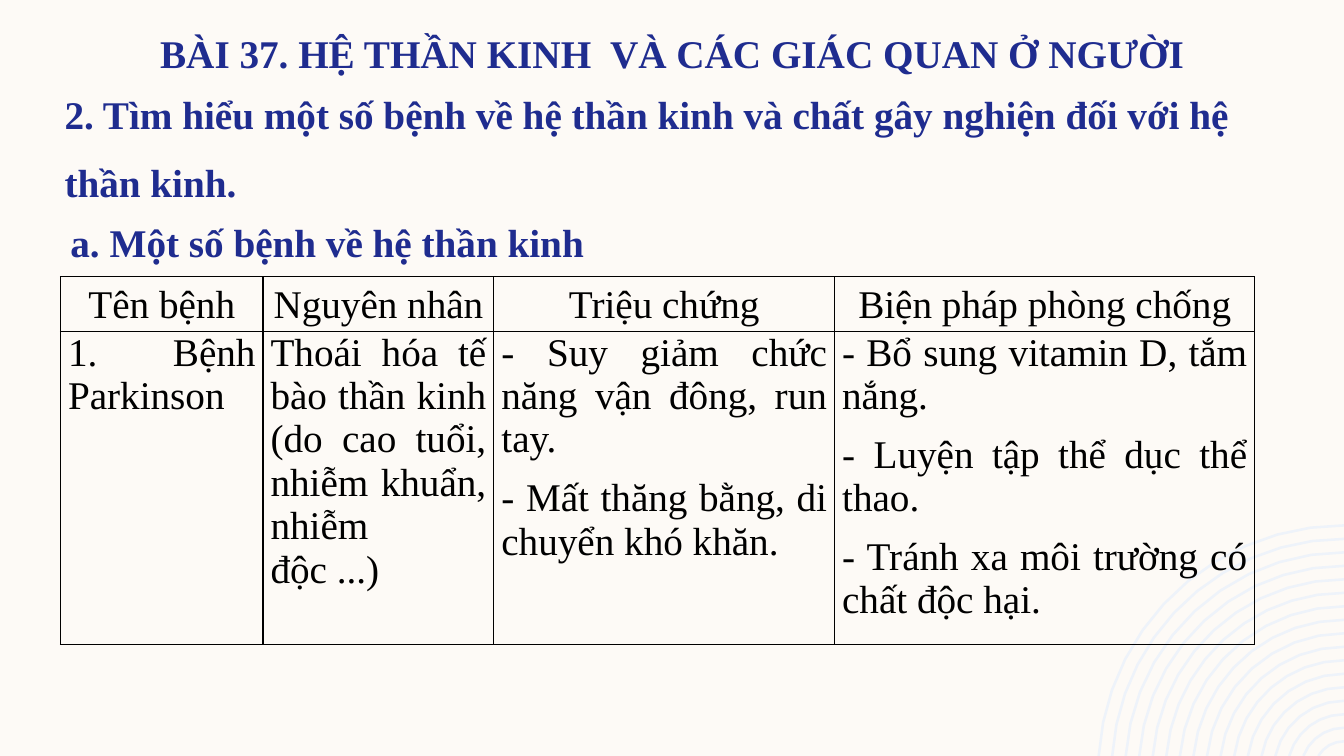
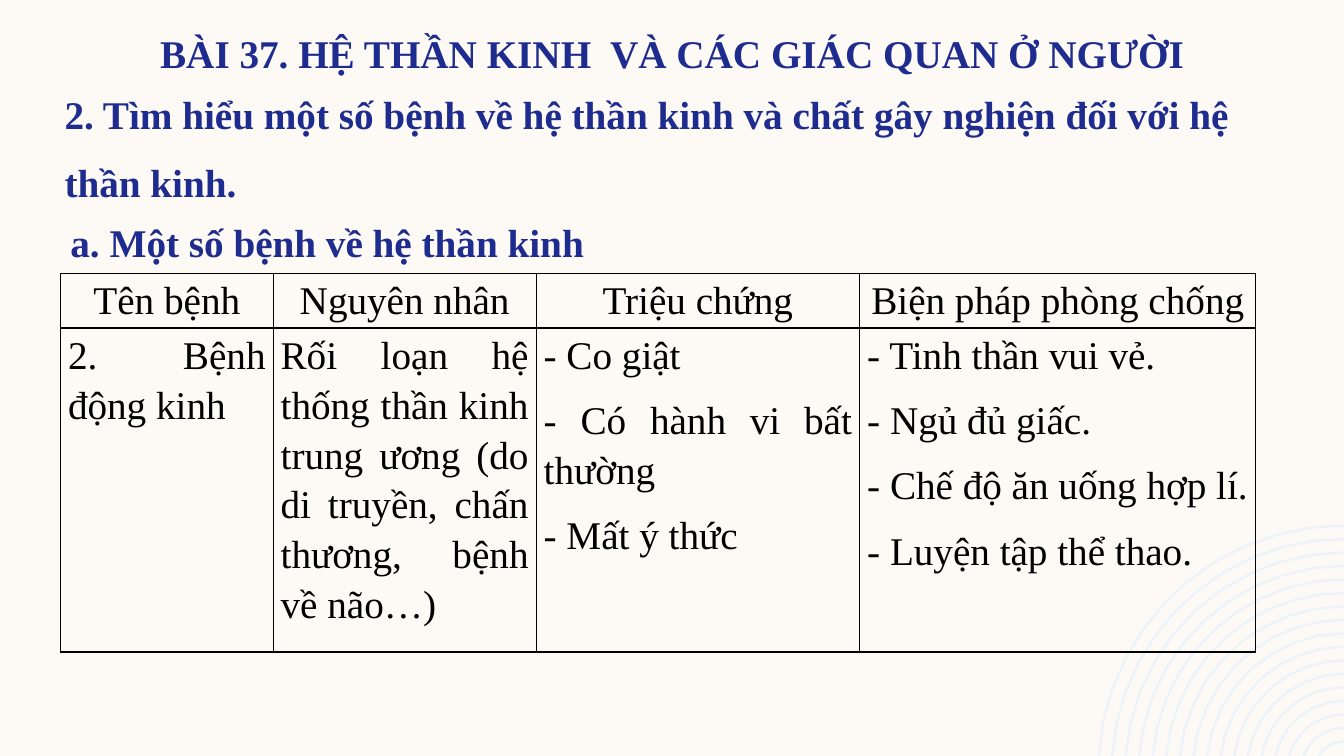
"""Build two lesson slides on diseases of the nervous system."""
from math import asin, ceil, cos, pi, sin, sqrt

from lxml.etree import SubElement
from pptx import Presentation
from pptx.dml.color import RGBColor
from pptx.enum.text import MSO_ANCHOR, MSO_AUTO_SIZE, PP_ALIGN
from pptx.oxml.ns import qn
from pptx.util import Pt

COLORS = {"paper": "FDFAF6", "rings": "EEF3FA", "heading": "1F2C8F", "text": "000000"}
FONT, FONT_SIZE = "Times New Roman", 28
WIDTH, HEIGHT = 960, 540

LESSON = "BÀI 37. HỆ THẦN KINH  VÀ CÁC GIÁC QUAN Ở NGƯỜI"
SECTION = "2. Tìm hiểu một số bệnh về hệ thần kinh và chất gây nghiện đối với hệ thần kinh."
TOPIC = "a. Một số bệnh về hệ thần kinh"
HEADERS = ["Tên bệnh", "Nguyên nhân", "Triệu chứng", "Biện pháp phòng chống"]
HEADER_HEIGHT = 39

DISEASES = [
    {
        "top": 197.6, "height": 223.6, "columns": [144.7, 164.9, 243.4, 300.2], "spacing": 1.0,
        "facts": [
            ["1. Bệnh Parkinson"],
            ["Thoái hóa tế bào thần kinh (do cao tuổi, nhiễm khuẩn, nhiễm độc ...)"],
            ["- Suy giảm chức năng vận đông, run tay.", "- Mất thăng bằng, di chuyển khó khăn."],
            ["- Bổ sung vitamin D, tắm nắng.", "- Luyện tập thể dục thể thao.",
             "- Tránh xa môi trường có chất độc hại."],
        ],
    },
    {
        "top": 195.3, "height": 231.5, "columns": [151.9, 187.9, 231.1, 283], "spacing": 1.15,
        "facts": [
            ["2. Bệnh động kinh"],
            ["Rối loạn hệ thống thần kinh trung ương (do di truyền, chấn thương, bệnh về não…)"],
            ["- Co giật", "- Có hành vi bất thường", "- Mất ý thức"],
            ["- Tinh thần vui vẻ.", "- Ngủ đủ giấc.", "- Chế độ ăn uống hợp lí.",
             "- Luyện tập thể thao."],
        ],
    },
]

RING_COUNT, RING_STEP, RING_WIDTH = 17, 9.64, 1.8
RING_RADIUS, RING_CENTER_Y = 175.5, 550.8


def rgb(name):
    return RGBColor.from_string(COLORS[name])


def write(frame, lines, color, align, spacing, before=0, after=0, bold=False):
    frame.text = "\n".join(lines)
    for index, paragraph in enumerate(frame.paragraphs):
        paragraph.alignment = align
        paragraph.line_spacing = spacing
        paragraph.space_before = Pt(before if index else 0)
        paragraph.space_after = Pt(after)
        for run in paragraph.runs:
            run.font.name = FONT
            run.font.size = Pt(FONT_SIZE)
            run.font.bold = bold
            run.font.color.rgb = rgb(color)


def place_heading(heading, text, box, align, spacing, insets, after=0):
    heading.left, heading.top, heading.width, heading.height = map(Pt, box)
    frame = heading.text_frame
    frame.word_wrap = True
    frame.auto_size = MSO_AUTO_SIZE.NONE
    frame.vertical_anchor = MSO_ANCHOR.TOP
    frame.margin_left = frame.margin_right = Pt(7.2)
    frame.margin_top, frame.margin_bottom = map(Pt, insets)
    write(frame, [text], "heading", align, spacing, after=after, bold=True)


def arc(radius):
    start = asin((RING_CENTER_Y - HEIGHT) / radius)
    steps = ceil(0.8 * sqrt(radius))
    angles = [start + (pi / 2 - start) * step / steps for step in range(steps + 1)]
    return [(Pt(WIDTH - radius * cos(a)), Pt(RING_CENTER_Y - radius * sin(a))) for a in angles]


def add_rings(slide, layout):
    arcs = [arc(RING_RADIUS - RING_STEP * index) for index in range(RING_COUNT)]
    builder = slide.shapes.build_freeform(*arcs[0][0])
    builder.add_line_segments(arcs[0][1:], close=False)
    for points in arcs[1:]:
        builder.move_to(*points[0])
        builder.add_line_segments(points[1:], close=False)
    rings = builder.convert_to_shape()
    rings.shadow.inherit = False
    rings.fill.background()
    rings.line.color.rgb = rgb("rings")
    rings.line.width = Pt(RING_WIDTH)
    layout.shapes.element.insert(2, rings.element)


def style_cell(cell):
    cell.margin_left = cell.margin_right = Pt(5.4)
    cell.margin_top = cell.margin_bottom = 0
    properties = cell._tc.get_or_add_tcPr()
    for side in ("lnL", "lnR", "lnT", "lnB"):
        border = SubElement(properties, qn(f"a:{side}"), w=str(Pt(1)))
        fill = SubElement(border, qn("a:solidFill"))
        SubElement(fill, qn("a:srgbClr"), val=COLORS["text"])
    cell.fill.background()


def add_disease_table(slide, disease):
    columns = disease["columns"]
    heights = [HEADER_HEIGHT, disease["height"]]
    table = slide.shapes.add_table(
        2, len(columns), Pt(43.2), Pt(disease["top"]), Pt(sum(columns)), Pt(sum(heights))).table
    table.first_row = table.horz_banding = False
    for row, height in zip(table.rows, heights):
        row.height = Pt(height)
    for index, width in enumerate(columns):
        table.columns[index].width = Pt(width)
        header, fact = table.cell(0, index), table.cell(1, index)
        style_cell(header)
        style_cell(fact)
        write(header.text_frame, [HEADERS[index]], "text", PP_ALIGN.CENTER, 1.15, after=3)
        write(fact.text_frame, disease["facts"][index], "text", PP_ALIGN.JUSTIFY,
              disease["spacing"], before=8, after=3)


def add_disease_slide(deck, layout, disease):
    slide = deck.slides.add_slide(layout)
    place_heading(slide.shapes.title, LESSON, (0, 5.8, WIDTH, 46.8),
                  PP_ALIGN.CENTER, Pt(48.8), (0, 3.6))
    section = slide.shapes.add_textbox(0, 0, 0, 0)
    place_heading(section, SECTION, (39, 49, 888, 46.8), PP_ALIGN.LEFT, Pt(48.8), (0, 3.6))
    add_disease_table(slide, disease)
    topic = slide.shapes.add_textbox(0, 0, 0, 0)
    place_heading(topic, TOPIC, (43.2, 147.6, 480, 44), PP_ALIGN.JUSTIFY, 1.15, (3.6, 3.6), after=3)
    return slide


def main():
    deck = Presentation()
    deck.slide_width, deck.slide_height = Pt(WIDTH), Pt(HEIGHT)
    backdrop = deck.slide_master.background.fill
    backdrop.solid()
    backdrop.fore_color.rgb = rgb("paper")
    layout = deck.slide_layouts.get_by_name("Title Only")
    slides = [add_disease_slide(deck, layout, disease) for disease in DISEASES]
    add_rings(slides[0], layout)
    deck.save("out.pptx")


if __name__ == "__main__":
    main()
